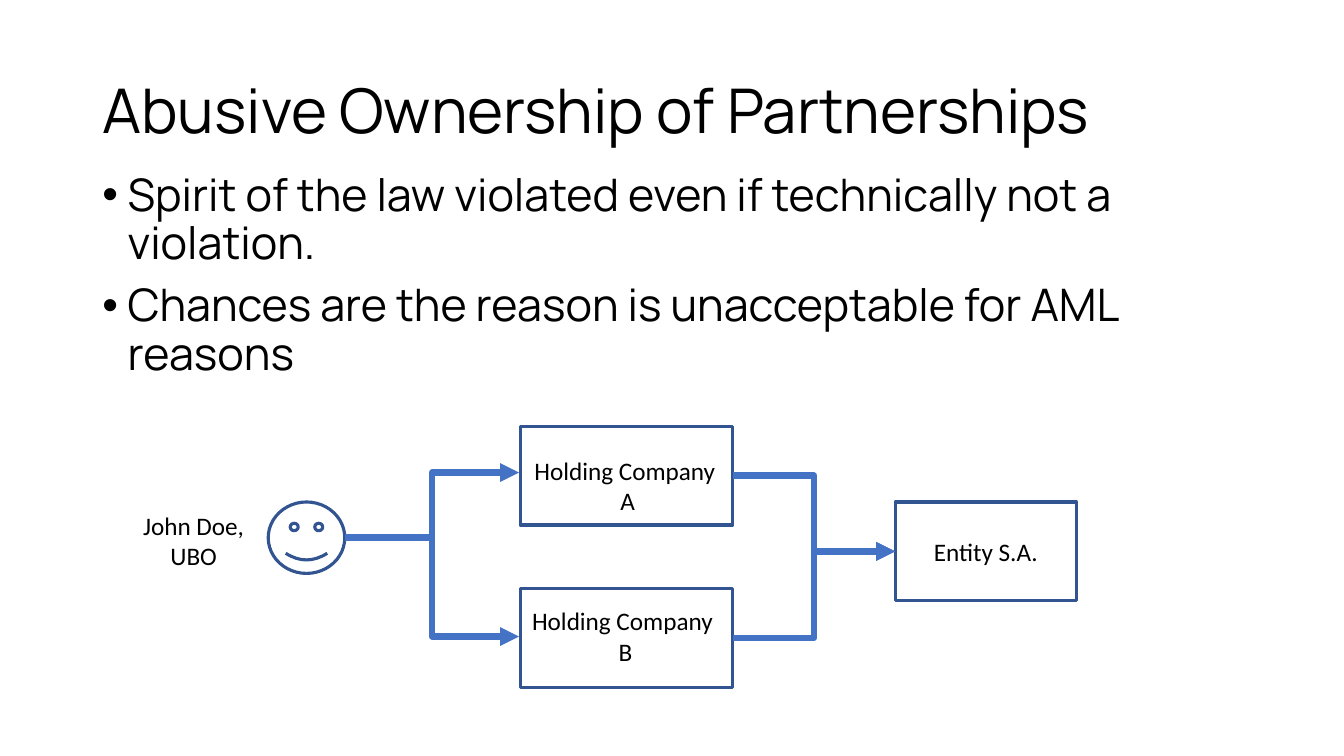
import lxml.etree
import pptx
import pptx.dml.color
import pptx.enum.shapes
import pptx.enum.text
import pptx.oxml.ns
import pptx.util
from pptx.util import Cm

BLACK = pptx.dml.color.RGBColor(0x00, 0x00, 0x00)
OUTLINE = pptx.dml.color.RGBColor(0x32, 0x54, 0x91)
ARROW = pptx.dml.color.RGBColor(0x44, 0x72, 0xC4)
HEADING_FONT = "Manrope"
LABEL_FONT = "Calibri"

PRESET = pptx.enum.shapes.MSO_SHAPE
ALIGN = pptx.enum.text.PP_ALIGN
ANCHOR = pptx.enum.text.MSO_ANCHOR


def add_child(parent, tag, **attributes):
    return lxml.etree.SubElement(parent, pptx.oxml.ns.qn(tag), attributes)


def add_text(slide, box, lines, font_name, size, wrap=True):
    text_box = slide.shapes.add_textbox(*box)
    frame = text_box.text_frame
    frame.word_wrap = wrap
    frame.text = "\n".join(lines)
    for paragraph in frame.paragraphs:
        paragraph.font.name = font_name
        paragraph.font.size = pptx.util.Pt(size)
        paragraph.font.color.rgb = BLACK
    return frame


def add_title(slide, box, title):
    frame = add_text(slide, box, [title], HEADING_FONT, 44)
    frame.vertical_anchor = ANCHOR.MIDDLE
    frame.paragraphs[0].line_spacing = 0.9


def add_bullets(slide, box, lines):
    frame = add_text(slide, box, lines, HEADING_FONT, 32)
    indent = Cm(0.635)
    for paragraph in frame.paragraphs:
        paragraph.line_spacing = 0.9
        paragraph.space_before = pptx.util.Pt(10)
        properties = paragraph._p.get_or_add_pPr()
        properties.set("marL", str(indent))
        properties.set("indent", str(-indent))
        bullet_font = pptx.oxml.ns.qn("a:buFont")
        bullet = pptx.oxml.ns.qn("a:buChar")
        defaults = properties.find(pptx.oxml.ns.qn("a:defRPr"))
        for tag, attributes in ((bullet_font, {"typeface": "Arial"}), (bullet, {"char": "•"})):
            element = lxml.etree.Element(tag, attributes)
            if defaults is None:
                properties.append(element)
            else:
                defaults.addprevious(element)


def add_outline(slide, preset, box):
    shape = slide.shapes.add_shape(preset, *box)
    shape.shadow.inherit = False
    shape.fill.background()
    shape.line.color.rgb = OUTLINE
    shape.line.width = pptx.util.Pt(2.25)
    return shape


def add_label(slide, box, lines, wrap=False):
    frame = add_text(slide, box, lines, LABEL_FONT, 18, wrap)
    for paragraph in frame.paragraphs:
        paragraph.alignment = ALIGN.CENTER


def add_elbow_arrow(slide, start, end):
    connector = slide.shapes.add_connector(
        pptx.enum.shapes.MSO_CONNECTOR.ELBOW, *start, *end)
    connector.line.color.rgb = ARROW
    connector.line.width = pptx.util.Pt(4.5)
    add_child(connector.line._get_or_add_ln(), "a:tailEnd", type="triangle")
    add_child(connector._element.spPr, "a:effectLst")


def left_middle(shape):
    return shape.left, shape.top + shape.height // 2


def right_middle(shape):
    return shape.left + shape.width, shape.top + shape.height // 2


def add_ownership_diagram(slide, left, top):
    def place(x, y, width, height):
        return left + Cm(x), top + Cm(y), Cm(width), Cm(height)

    holdings = [add_outline(slide, PRESET.RECTANGLE, place(9.78, y, 5.36, 2.49))
                for y in (0, 4.09)]
    entity = add_outline(slide, PRESET.RECTANGLE, place(19.23, 1.91, 4.57, 2.49))
    owner = add_outline(slide, PRESET.SMILEY_FACE, place(3.43, 1.91, 1.93, 1.8))

    add_label(slide, place(9.85, 0.61, 5.28, 1.8), ["Holding Company ", "A"])
    add_label(slide, place(0, 1.99, 3.1, 1.8), ["John Doe,", "UBO"])
    add_label(slide, place(9.75, 4.4, 5.36, 1.8), ["Holding Company ", "B"], wrap=True)
    add_label(slide, place(19.94, 2.65, 3.15, 1.02), ["Entity S.A."])

    for holding, arrow_y in zip(holdings, (1.17, 5.3)):
        add_elbow_arrow(slide, right_middle(owner), (left + Cm(9.75), top + Cm(arrow_y)))
        add_elbow_arrow(slide, right_middle(holding), left_middle(entity))


def main():
    presentation = pptx.Presentation()
    presentation.slide_width = Cm(33.87)
    presentation.slide_height = Cm(19.05)
    slide = presentation.slides.add_slide(presentation.slide_layouts[6])

    add_title(slide, (Cm(2.33), Cm(1.01), Cm(29.21), Cm(3.68)),
              "Abusive Ownership of Partnerships")
    add_bullets(slide, (Cm(2.33), Cm(4.22), Cm(29.21), Cm(6.45)), [
        "Spirit of the law violated even if technically not a violation.",
        "Chances are the reason is unacceptable for AML reasons",
    ])
    add_ownership_diagram(slide, Cm(3.33), Cm(10.74))
    presentation.save("out.pptx")


if __name__ == "__main__":
    main()
